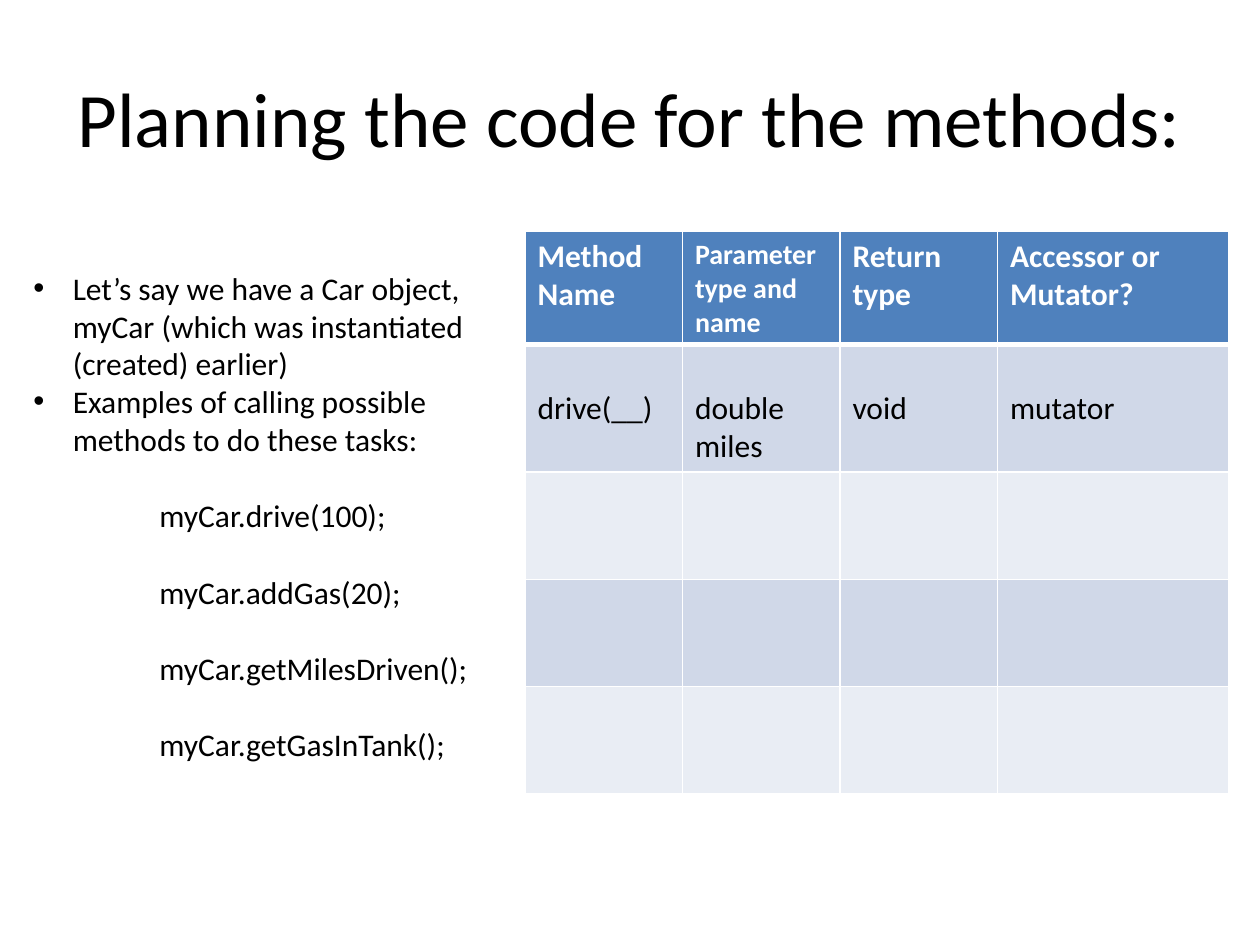
import pptx
import pptx.dml.color
import pptx.enum.text
import pptx.oxml.ns
import pptx.util
from lxml import etree

Pt = pptx.util.Pt
RGBColor = pptx.dml.color.RGBColor

BLACK = RGBColor(0x00, 0x00, 0x00)
WHITE = RGBColor(0xFF, 0xFF, 0xFF)
HEADER_BLUE = RGBColor(0x4F, 0x81, 0xBD)
BAND_DARK = RGBColor(0xD0, 0xD8, 0xE8)
BAND_LIGHT = RGBColor(0xE9, 0xED, 0xF4)

FONT = "Calibri"
BODY_SIZE = 18
LINE_HEIGHT = 22
TITLE_ONLY_LAYOUT = 5

TASKS = [
    "Let’s say we have a Car object, myCar (which was instantiated (created) earlier)",
    "Examples of calling possible methods to do these tasks:",
]
CALLS = [
    "myCar.drive(100);",
    "myCar.addGas(20);",
    "myCar.getMilesDriven();",
    "myCar.getGasInTank();",
]
HEADERS = [
    ("Method Name", 18),
    ("Parameter type and name", 16),
    ("Return type", 18),
    ("Accessor or Mutator?", 18),
]
DRIVE_ROW = ["drive(__)", "double miles", "void", "mutator"]
COLUMN_WIDTHS = [90, 90, 90, 132]
ROW_HEIGHTS = [63.5, 73, 61.2, 61.2, 61.2]


def add_child(parent, tag, **attributes):
    return etree.SubElement(parent, pptx.oxml.ns.qn(tag), attributes)


def format_paragraph(paragraph, size=BODY_SIZE, color=BLACK, bold=False):
    for run in paragraph.runs:
        run.font.name = FONT
        run.font.size = Pt(size)
        run.font.color.rgb = color
        run.font.bold = bold


def indent(paragraph, left, first_line=0):
    properties = paragraph._p.get_or_add_pPr()
    properties.set("marL", str(Pt(left)))
    properties.set("indent", str(Pt(first_line)))
    return properties


def add_bullet(paragraph):
    properties = indent(paragraph, 22.5, -22.5)
    add_child(properties, "a:buFont", typeface="Arial")
    add_child(properties, "a:buChar", char="•")


def set_title(slide, text):
    title = slide.shapes.title
    title.left, title.top, title.width, title.height = Pt(36), Pt(21.6), Pt(648), Pt(90)
    frame = title.text_frame
    frame.text = text
    frame.vertical_anchor = pptx.enum.text.MSO_ANCHOR.MIDDLE
    frame.paragraphs[0].alignment = pptx.enum.text.PP_ALIGN.CENTER
    format_paragraph(frame.paragraphs[0], size=44)


def add_task_list(slide):
    box = slide.shapes.add_textbox(Pt(12), Pt(150), Pt(276), Pt(334))
    frame = box.text_frame
    frame.word_wrap = True
    frame.text = "\n".join(TASKS + CALLS)
    for index, paragraph in enumerate(frame.paragraphs):
        format_paragraph(paragraph)
        if index < len(TASKS):
            add_bullet(paragraph)
        else:
            indent(paragraph, 72)
            paragraph.space_before = Pt(LINE_HEIGHT)


def set_borders(cell, bottom_width):
    properties = cell._tc.get_or_add_tcPr()
    widths = {"a:lnL": 1, "a:lnR": 1, "a:lnT": 1, "a:lnB": bottom_width}
    for tag, width in widths.items():
        line = add_child(properties, tag, w=str(Pt(width)))
        add_child(add_child(line, "a:solidFill"), "a:srgbClr", val=str(WHITE))


def style_cell(cell, fill, bottom_width=1):
    """Draw the borders before the fill, as the order of the XML requires."""
    set_borders(cell, bottom_width)
    cell.fill.solid()
    cell.fill.fore_color.rgb = fill


def add_method_table(slide):
    frame = slide.shapes.add_table(
        len(ROW_HEIGHTS), len(COLUMN_WIDTHS), Pt(300), Pt(132),
        Pt(sum(COLUMN_WIDTHS)), Pt(sum(ROW_HEIGHTS)))
    table = frame.table
    for column, width in zip(table.columns, COLUMN_WIDTHS):
        column.width = Pt(width)
    for row, height in zip(table.rows, ROW_HEIGHTS):
        row.height = Pt(height)

    for cell, (text, size) in zip(table.rows[0].cells, HEADERS):
        style_cell(cell, HEADER_BLUE, bottom_width=3)
        cell.text_frame.text = text
        format_paragraph(cell.text_frame.paragraphs[0], size, WHITE, bold=True)

    for row_index in range(1, len(ROW_HEIGHTS)):
        for cell in table.rows[row_index].cells:
            style_cell(cell, BAND_DARK if row_index % 2 else BAND_LIGHT)
    # The header's thick rule is shared with the row below it.
    for cell, text in zip(table.rows[1].cells, DRIVE_ROW):
        cell._tc.tcPr.find(pptx.oxml.ns.qn("a:lnT")).set("w", str(Pt(3)))
        cell.margin_top = Pt(3.6 + LINE_HEIGHT)
        cell.text_frame.text = text
        format_paragraph(cell.text_frame.paragraphs[0])


def main():
    presentation = pptx.Presentation()
    presentation.slide_width, presentation.slide_height = Pt(720), Pt(540)
    slide = presentation.slides.add_slide(presentation.slide_layouts[TITLE_ONLY_LAYOUT])
    set_title(slide, "Planning the code for the methods:")
    add_task_list(slide)
    add_method_table(slide)
    presentation.save("out.pptx")


if __name__ == "__main__":
    main()
